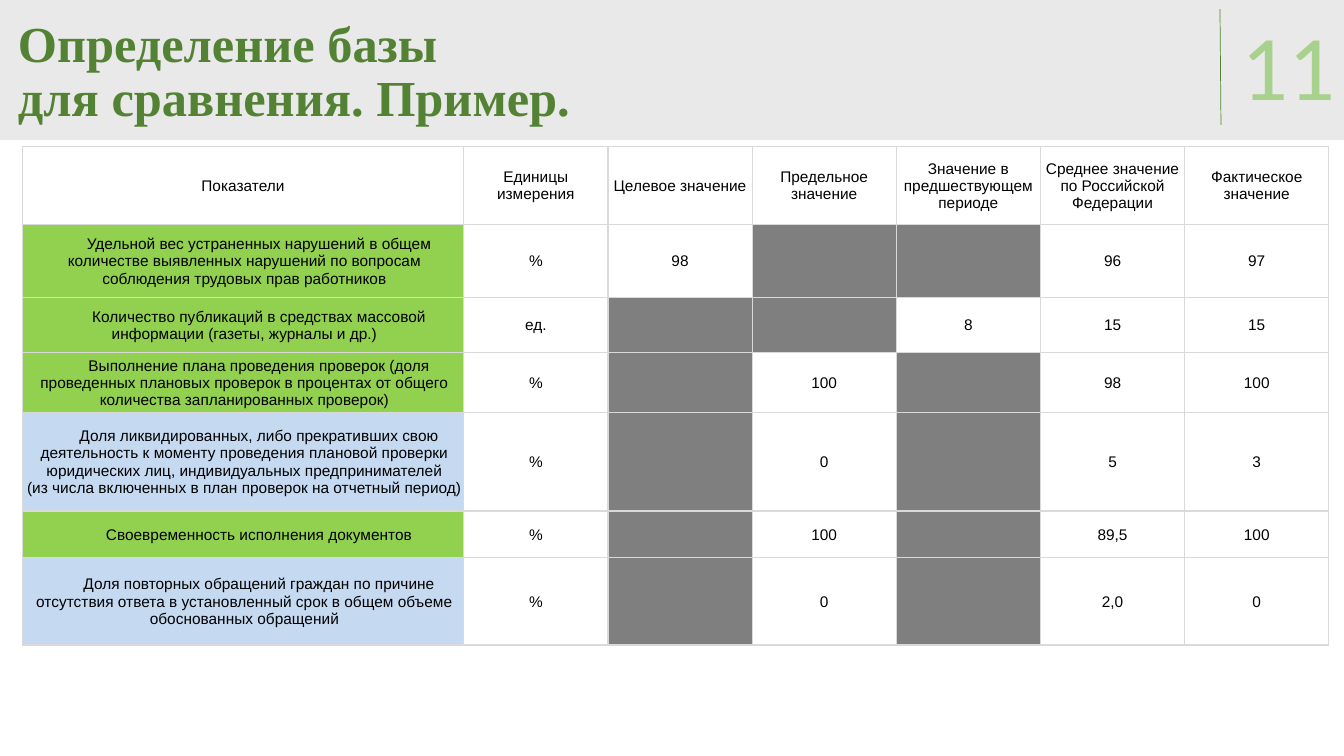
from dataclasses import dataclass

from lxml.etree import SubElement
from pptx import Presentation
from pptx.dml.color import RGBColor as RGB
from pptx.enum.shapes import MSO_CONNECTOR as CONNECTOR, MSO_SHAPE as SHAPE
from pptx.enum.text import MSO_ANCHOR as ANCHOR, PP_ALIGN as ALIGN
from pptx.oxml.ns import qn
from pptx.util import Inches, Pt


@dataclass(frozen=True)
class Theme:
    band: str = "AFABAB"
    heading: str = "548235"
    number: str = "A9D18E"
    text: str = "000000"
    border: str = "D9D9D9"
    green: str = "92D050"
    blue: str = "C5D9F1"
    unused: str = "7F7F7F"
    heading_size: int = 36
    number_size: int = 66
    table_size: int = 11
    heading_font: str = "Times New Roman"
    number_font: str = "Calibri"
    table_font: str = "Arial"


THEME = Theme()

COLUMN_WIDTHS = [4.38] + [1.43] * 6
ROW_HEIGHTS = [0.78, 0.72, 0.55, 0.59, 0.98, 0.46, 0.87]
HEADERS = [
    "Показатели", "Единицы измерения", "Целевое значение", "Предельное значение",
    "Значение в предшествующем периоде", "Среднее значение по Российской Федерации",
    "Фактическое значение",
]
INDICATORS = [
    (THEME.green, "Удельной вес устраненных нарушений в общем количестве выявленных нарушений "
                  "по вопросам соблюдения трудовых прав работников",
     "%", "98", "", "", "96", "97"),
    (THEME.green, "Количество публикаций в средствах массовой информации (газеты, журналы и др.)",
     "ед.", "", "", "8", "15", "15"),
    (THEME.green, "Выполнение плана проведения проверок (доля проведенных плановых проверок "
                  "в процентах от общего количества запланированных проверок)",
     "%", "", "100", "", "98", "100"),
    (THEME.blue, "Доля ликвидированных, либо прекративших свою деятельность к моменту проведения "
                 "плановой проверки юридических лиц, индивидуальных предпринимателей\v"
                 "(из числа включенных в план проверок на отчетный период)",
     "%", "", "0", "", "5", "3"),
    (THEME.green, "Своевременность исполнения документов",
     "%", "", "100", "", "89,5", "100"),
    (THEME.blue, "Доля повторных обращений граждан по причине отсутствия ответа "
                 "в установленный срок в общем объеме обоснованных обращений",
     "%", "", "0", "", "2,0", "0"),
]


def style_font(font, name, size, color, bold=False):
    font.name = name
    font.size = Pt(size)
    font.bold = bold
    font.color.rgb = RGB.from_string(color)


def add_band(slide, width, height):
    band = slide.shapes.add_shape(SHAPE.RECTANGLE, 0, 0, width, height)
    band.shadow.inherit = False
    band.line.fill.background()
    band.fill.solid()
    band.fill.fore_color.rgb = RGB.from_string(THEME.band)
    tint = band.fill._xPr.find(".//" + qn("a:srgbClr"))
    SubElement(tint, qn("a:alpha"), val="25000")


def add_label(slide, text, box, font, align=ALIGN.LEFT, spacing=1.0):
    frame = slide.shapes.add_textbox(*map(Inches, box)).text_frame
    frame.word_wrap = True
    frame.vertical_anchor = ANCHOR.MIDDLE
    label = frame.paragraphs[0]
    label.text = text
    label.alignment = align
    label.line_spacing = spacing
    style_font(label.font, *font)


def add_divider(slide, start, end):
    divider = slide.shapes.add_connector(CONNECTOR.STRAIGHT, *map(Inches, start + end))
    divider.line.color.rgb = RGB.from_string(THEME.heading)
    divider.line.width = Pt(0.5)
    SubElement(divider._element.spPr, qn("a:effectLst"))


def add_borders(cell):
    properties = cell._tc.get_or_add_tcPr()
    for side in ("lnL", "lnR", "lnT", "lnB"):
        border = SubElement(properties, qn("a:" + side), w=str(Pt(1)))
        SubElement(SubElement(border, qn("a:solidFill")), qn("a:srgbClr"), val=THEME.border)


def fill_cell(cell, text, color=None, first_indent=0):
    add_borders(cell)
    if color:
        cell.fill.solid()
        cell.fill.fore_color.rgb = RGB.from_string(color)
    else:
        cell.fill.background()
    cell.vertical_anchor = ANCHOR.MIDDLE
    cell.margin_left = Inches(0.04 if first_indent else 0.01)
    cell.margin_right = cell.margin_top = Inches(0.01)
    cell.margin_bottom = 0
    content = cell.text_frame.paragraphs[0]
    content.text = text
    content.alignment = ALIGN.CENTER
    style_font(content.font, THEME.table_font, THEME.table_size, THEME.text)
    if first_indent:
        content._p.get_or_add_pPr().set("indent", str(Inches(first_indent)))


def add_indicator_table(slide, left, top):
    frame = slide.shapes.add_table(
        len(ROW_HEIGHTS), len(COLUMN_WIDTHS), Inches(left), Inches(top),
        Inches(sum(COLUMN_WIDTHS)), Inches(sum(ROW_HEIGHTS)))
    table = frame.table
    table.first_row = table.horz_banding = False
    for column, width in zip(table.columns, COLUMN_WIDTHS):
        column.width = Inches(width)
    for row, height in zip(table.rows, ROW_HEIGHTS):
        row.height = Inches(height)
    for column, header in enumerate(HEADERS):
        fill_cell(table.cell(0, column), header)
    for row, (color, indicator, *values) in enumerate(INDICATORS, 1):
        fill_cell(table.cell(row, 0), indicator, color, first_indent=0.29)
        for column, value in enumerate(values, 1):
            fill_cell(table.cell(row, column), value, None if value else THEME.unused)


def main():
    deck = Presentation()
    deck.slide_width, deck.slide_height = Inches(13.33), Inches(7.5)
    slide = deck.slides.add_slide(deck.slide_layouts[6])
    add_band(slide, deck.slide_width, Inches(1.39))
    add_label(slide, "Определение базы\vдля сравнения. Пример.", (0.08, 0, 8.4, 1.45),
              (THEME.heading_font, THEME.heading_size, THEME.heading, True), spacing=0.9)
    add_label(slide, "11", (12.17, 0.23, 1.17, 0.81),
              (THEME.number_font, THEME.number_size, THEME.number), ALIGN.RIGHT)
    add_divider(slide, (12.1, 0.09), (12.11, 1.24))
    add_indicator_table(slide, 0.22, 1.45)
    deck.save("out.pptx")


if __name__ == "__main__":
    main()
